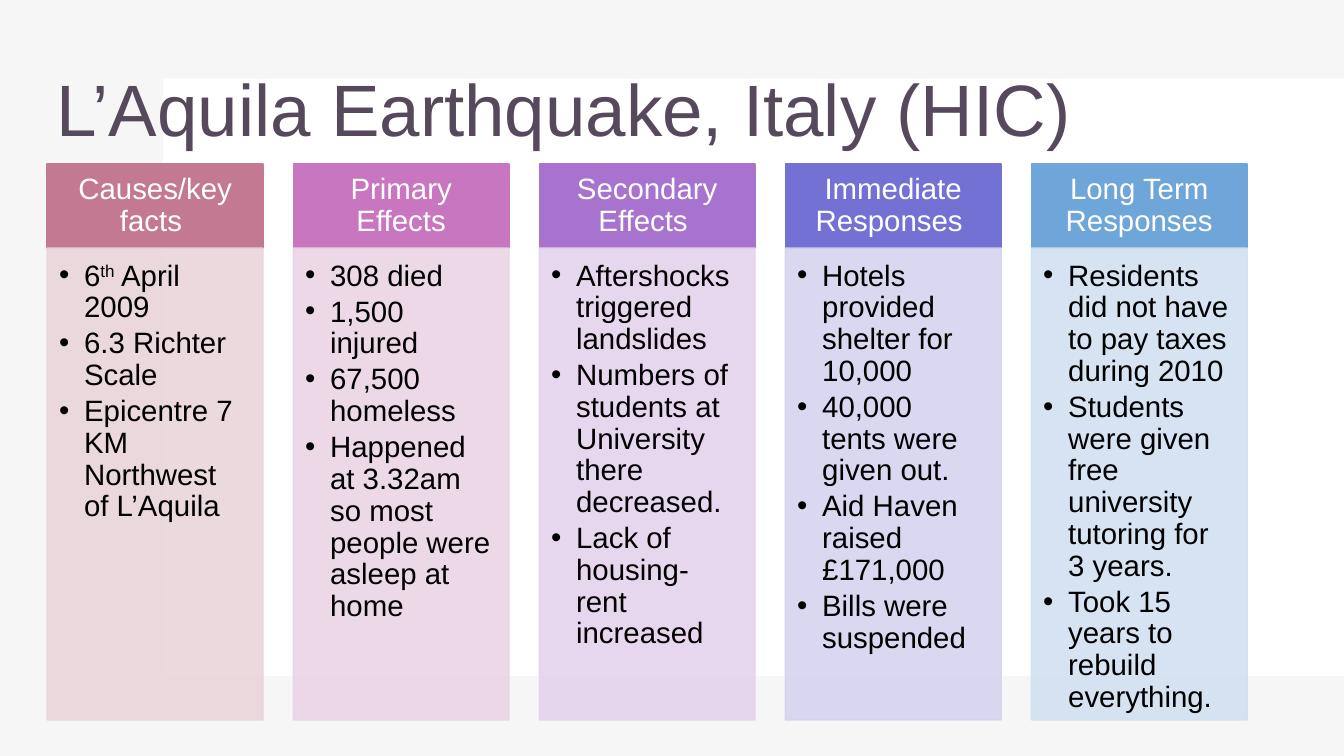
from dataclasses import dataclass

from lxml import etree
from pptx import Presentation
from pptx import util as u
from pptx.dml.color import RGBColor
from pptx.enum import shapes, text
from pptx.oxml import ns

FONT = "Arial"
WHITE = RGBColor(0xFF, 0xFF, 0xFF)
BLACK = RGBColor(0x00, 0x00, 0x00)
GREY = RGBColor(0xE7, 0xE6, 0xE6)
PLUM = RGBColor(0x57, 0x49, 0x5C)
ROSE = RGBColor(0xC3, 0x79, 0x92)
PALE_ROSE = RGBColor(0xE9, 0xD5, 0xDB)
PINK = RGBColor(0xC8, 0x76, 0xC0)
PALE_PINK = RGBColor(0xEB, 0xD4, 0xE5)
PURPLE = RGBColor(0xA8, 0x73, 0xCE)
PALE_PURPLE = RGBColor(0xE5, 0xD3, 0xED)
INDIGO = RGBColor(0x73, 0x71, 0xD4)
PALE_INDIGO = RGBColor(0xD6, 0xD3, 0xEF)
BLUE = RGBColor(0x6F, 0xA6, 0xD9)
PALE_BLUE = RGBColor(0xD2, 0xE0, 0xF1)

SLIDE_W, SLIDE_H = 33.87, 19.05
FIRST_LEFT, PITCH, COLUMN_W = 1.19, 6.2, 5.44
HEADER_TOP, HEADER_H, BODY_H = 4.13, 2.12, 11.89
RAISED_MARK = "^"


@dataclass(frozen=True)
class Box:
    left: float
    top: float
    width: float
    height: float


@dataclass(frozen=True)
class Column:
    heading: str
    dark: RGBColor
    pale: RGBColor
    facts: tuple[str, ...]


COLUMNS = (
    Column("Causes/key facts ", ROSE, PALE_ROSE, (
        "6^th^ April 2009",
        "6.3 Richter Scale",
        "Epicentre 7 KM Northwest of L’Aquila",
    )),
    Column("Primary Effects", PINK, PALE_PINK, (
        "308 died",
        "1,500 injured",
        "67,500 homeless",
        "Happened at 3.32am so most people were asleep at home",
    )),
    Column("Secondary Effects ", PURPLE, PALE_PURPLE, (
        "Aftershocks triggered landslides",
        "Numbers of students at University there decreased.",
        "Lack of housing-rent increased",
    )),
    Column("Immediate Responses ", INDIGO, PALE_INDIGO, (
        "Hotels provided shelter for 10,000",
        "40,000 tents were given out.",
        "Aid Haven raised £171,000",
        "Bills were suspended",
    )),
    Column("Long Term Responses", BLUE, PALE_BLUE, (
        "Residents did not have to pay taxes during 2010",
        "Students were given free university tutoring for 3 years.",
        "Took 15 years to rebuild everything.",
    )),
)


def place(sp, box: Box) -> None:
    sp.left, sp.top = u.Cm(box.left), u.Cm(box.top)
    sp.width, sp.height = u.Cm(box.width), u.Cm(box.height)


def add_rect(s, box: Box, color: RGBColor, opacity: int = 100, outlined: bool = False):
    sp = s.shapes.add_shape(shapes.MSO_SHAPE.RECTANGLE, 0, 0, 0, 0)
    place(sp, box)
    sp.shadow.inherit = False
    sp.fill.solid()
    sp.fill.fore_color.rgb = color
    if outlined:
        sp.line.color.rgb = color
        sp.line.width = u.Pt(1)
    else:
        sp.line.fill.background()
    if opacity < 100:
        for clr in sp._element.spPr.iter(ns.qn("a:srgbClr")):
            etree.SubElement(clr, ns.qn("a:alpha"), val=str(opacity * 1000))
    return sp


def set_frame(tf, anchor, left: float, top: float, right: float, bottom: float) -> None:
    tf.word_wrap = True
    tf.auto_size = text.MSO_AUTO_SIZE.NONE
    tf.vertical_anchor = anchor
    tf.margin_left, tf.margin_top = u.Cm(left), u.Cm(top)
    tf.margin_right, tf.margin_bottom = u.Cm(right), u.Cm(bottom)


def add_runs(p, marked: str, size: float, color: RGBColor, align) -> None:
    p.alignment = align
    p.line_spacing = 0.9
    for i, part in enumerate(marked.split(RAISED_MARK)):
        r = p.add_run()
        r.text = part
        r.font.name = FONT
        r.font.size = u.Pt(size)
        r.font.color.rgb = color
        if i % 2:
            r._r.get_or_add_rPr().set("baseline", "30000")


def add_bullet(p) -> None:
    pPr = p._p.get_or_add_pPr()
    pPr.set("marL", str(u.Cm(0.63)))
    pPr.set("indent", str(u.Cm(-0.63)))
    etree.SubElement(pPr, ns.qn("a:buFont"), typeface=FONT)
    etree.SubElement(pPr, ns.qn("a:buChar"), char="•")


def add_title(s) -> None:
    title = s.shapes.title
    s.shapes._spTree.append(title._element)
    place(title, Box(1.17, 1.0, 29.29, 3.68))
    tf = title.text_frame
    set_frame(tf, text.MSO_ANCHOR.MIDDLE, 0.25, 0.13, 0.25, 0.13)
    add_runs(tf.paragraphs[0], "L’Aquila Earthquake, Italy (HIC)", 52, PLUM, text.PP_ALIGN.LEFT)


def add_column(s, column: Column, left: float) -> None:
    header = add_rect(s, Box(left, HEADER_TOP, COLUMN_W, HEADER_H), column.dark, outlined=True)
    tf = header.text_frame
    set_frame(tf, text.MSO_ANCHOR.MIDDLE, 0.41, 0.23, 0.41, 0.23)
    add_runs(tf.paragraphs[0], column.heading, 21, WHITE, text.PP_ALIGN.CENTER)

    body = add_rect(s, Box(left, HEADER_TOP + HEADER_H, COLUMN_W, BODY_H), column.pale, 90, True)
    tf = body.text_frame
    set_frame(tf, text.MSO_ANCHOR.TOP, 0.3, 0.32, 0.46, 0.46)
    for i, fact in enumerate(column.facts):
        p = tf.add_paragraph() if i else tf.paragraphs[0]
        p.space_before = u.Pt(3.1 if i else 0)
        add_runs(p, fact, 21, BLACK, text.PP_ALIGN.LEFT)
        add_bullet(p)


def main() -> None:
    prs = Presentation()
    prs.slide_width, prs.slide_height = u.Cm(SLIDE_W), u.Cm(SLIDE_H)
    s = prs.slides.add_slide(prs.slide_layouts.get_by_name("Title Only"))
    add_rect(s, Box(0, 0, SLIDE_W, SLIDE_H), GREY, 35)
    add_rect(s, Box(4.11, 1.98, 29.76, 15.06), WHITE)
    add_title(s)
    for i, column in enumerate(COLUMNS):
        add_column(s, column, FIRST_LEFT + i * PITCH)
    prs.save("out.pptx")


if __name__ == "__main__":
    main()
